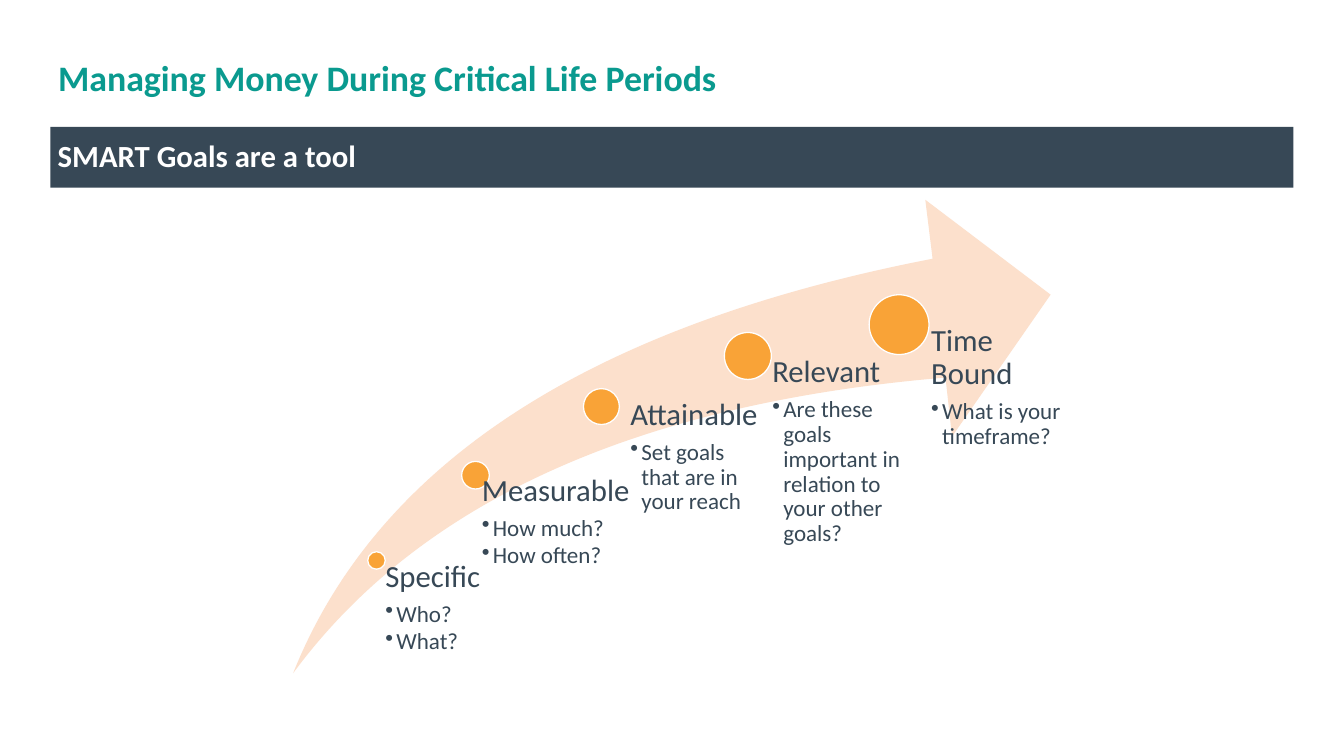
"""Build the SMART goals slide: a rising arrow with five growing milestones."""
from dataclasses import dataclass

from lxml.etree import SubElement
from pptx import Presentation
from pptx.dml.color import RGBColor
from pptx.enum.shapes import MSO_SHAPE as Shape
from pptx.enum.text import MSO_ANCHOR as Anchor, PP_ALIGN as Align
from pptx.oxml.ns import qn
from pptx.util import Pt

COLORS = {
    "title": "0A9A8F",
    "slate": "374856",
    "arrow": "FCE0CC",
    "dot": "F9A337",
    "white": "FFFFFF",
}
FONT = "Calibri"
BULLET_INDENT = 8.64
INSET_RATIO = 0.53

Point = tuple[float, float]
Box = tuple[float, float, float, float]


@dataclass(frozen=True)
class Goal:
    name: str
    questions: tuple[str, ...]
    dot: tuple[float, float, float]
    label: Box


GOALS = (
    Goal("Specific", ("Who?", "What?"),
         (287.3, 431.3, 13.7), (293.8, 438.5, 84.2, 87.8)),
    Goal("Measurable", ("How much?", "How often?"),
         (360.7, 360.7, 21.6), (365, 371.5, 131.8, 154.8)),
    Goal("Attainable", ("Set goals that are in your reach",),
         (455.8, 303.8, 28.1), (477.6, 312, 118.1, 208.1)),
    Goal("Relevant", ("Are these goals important in relation to your other goals?",),
         (565.9, 259.9, 36.7), (583.9, 278.6, 130.3, 247.7)),
    Goal("Time Bound", ("What is your timeframe?",),
         (679, 230.4, 46.8), (702.7, 254.2, 132.5, 272.2)),
)

TAIL: Point = (229, 526.3)
UPPER_EDGE: list[Point] = [(294.5, 362.2), (460.8, 254.2), (728.6, 202.3)]
HEAD: list[Point] = [(722.9, 156.2), (820.8, 230.4), (743.8, 341.3), (738.7, 295.2)]
LOWER_EDGE: list[Point] = [(497.5, 315.4), (327.6, 392.4), TAIL]


def rgb(name: str) -> RGBColor:
    return RGBColor.from_string(COLORS[name])


def set_frame(tf, insets: Box, anchor=Anchor.TOP) -> None:
    tf.word_wrap = True
    tf.vertical_anchor = anchor
    tf.margin_left, tf.margin_top, tf.margin_right, tf.margin_bottom = map(Pt, insets)


def set_paragraph(p, text: str, size: float, color: str, bold: bool = False) -> None:
    p.text = text
    p.line_spacing = 0.9
    font = p.runs[0].font
    font.name, font.size, font.bold = FONT, Pt(size), bold
    font.color.rgb = rgb(color)


def add_bullet(p, space_before: float) -> None:
    p.level = 1
    p.space_before = Pt(space_before)
    props = p._p.get_or_add_pPr()
    props.set("marL", str(Pt(BULLET_INDENT)))
    props.set("indent", str(-Pt(BULLET_INDENT)))
    SubElement(SubElement(props, qn("a:buClr")), qn("a:srgbClr")).set("val", COLORS["slate"])
    SubElement(props, qn("a:buChar")).set("char", "•")


def paint(sp, fill: str, line: str | None = None) -> None:
    sp.shadow.inherit = False
    sp.fill.solid()
    sp.fill.fore_color.rgb = rgb(fill)
    if line:
        sp.line.color.rgb = rgb(line)
        sp.line.width = Pt(1)
    else:
        sp.line.fill.background()


def add_headings(s) -> None:
    insets = (5.8, 3.6, 5.8, 3.6)
    title = s.shapes.add_textbox(*map(Pt, (39.6, 33.8, 970.6, 56.9)))
    band = s.shapes.add_shape(Shape.RECTANGLE, *map(Pt, (39.3, 99.2, 971.3, 47.5)))
    paint(band, "slate")
    for sp, text, size, color, align in (
        (title, "Managing Money During Critical Life Periods", 28, "title", Align.LEFT),
        (band, "SMART Goals are a tool", 24, "white", Align.JUSTIFY),
    ):
        set_frame(sp.text_frame, insets, Anchor.MIDDLE)
        p = sp.text_frame.paragraphs[0]
        set_paragraph(p, text, size, color, bold=True)
        p.alignment = align


def bend(segments: list) -> None:
    """Merge three straight segments into one cubic Bézier segment."""
    outline = segments[0].getparent()
    cubic = SubElement(outline, qn("a:cubicBezTo"))
    segments[0].addprevious(cubic)
    for segment in segments:
        cubic.append(segment[0])
        outline.remove(segment)


def add_arrow(s) -> None:
    builder = s.shapes.build_freeform(*map(Pt, TAIL))
    corners = UPPER_EDGE + HEAD + LOWER_EDGE
    builder.add_line_segments([(Pt(x), Pt(y)) for x, y in corners], close=True)
    sp = builder.convert_to_shape()
    segments = list(sp._element.iter(qn("a:lnTo")))
    bend(segments[:3])
    bend(segments[-3:])
    paint(sp, "arrow")


def add_goal(s, goal: Goal) -> None:
    left, top, size = goal.dot
    dot = s.shapes.add_shape(Shape.OVAL, *map(Pt, (left, top, size, size)))
    paint(dot, "dot", "white")
    tf = s.shapes.add_textbox(*map(Pt, goal.label)).text_frame
    set_frame(tf, (size * INSET_RATIO, 0, 0, 0))
    set_paragraph(tf.paragraphs[0], goal.name, 24, "slate")
    for i, question in enumerate(goal.questions):
        p = tf.add_paragraph()
        set_paragraph(p, question, 18, "slate")
        add_bullet(p, 2.1 if i else 6.3)


def main() -> None:
    prs = Presentation()
    prs.slide_width, prs.slide_height = Pt(1050), Pt(591)
    s = prs.slides.add_slide(prs.slide_layouts[6])
    add_headings(s)
    add_arrow(s)
    for goal in GOALS:
        add_goal(s, goal)
    prs.save("out.pptx")


if __name__ == "__main__":
    main()
